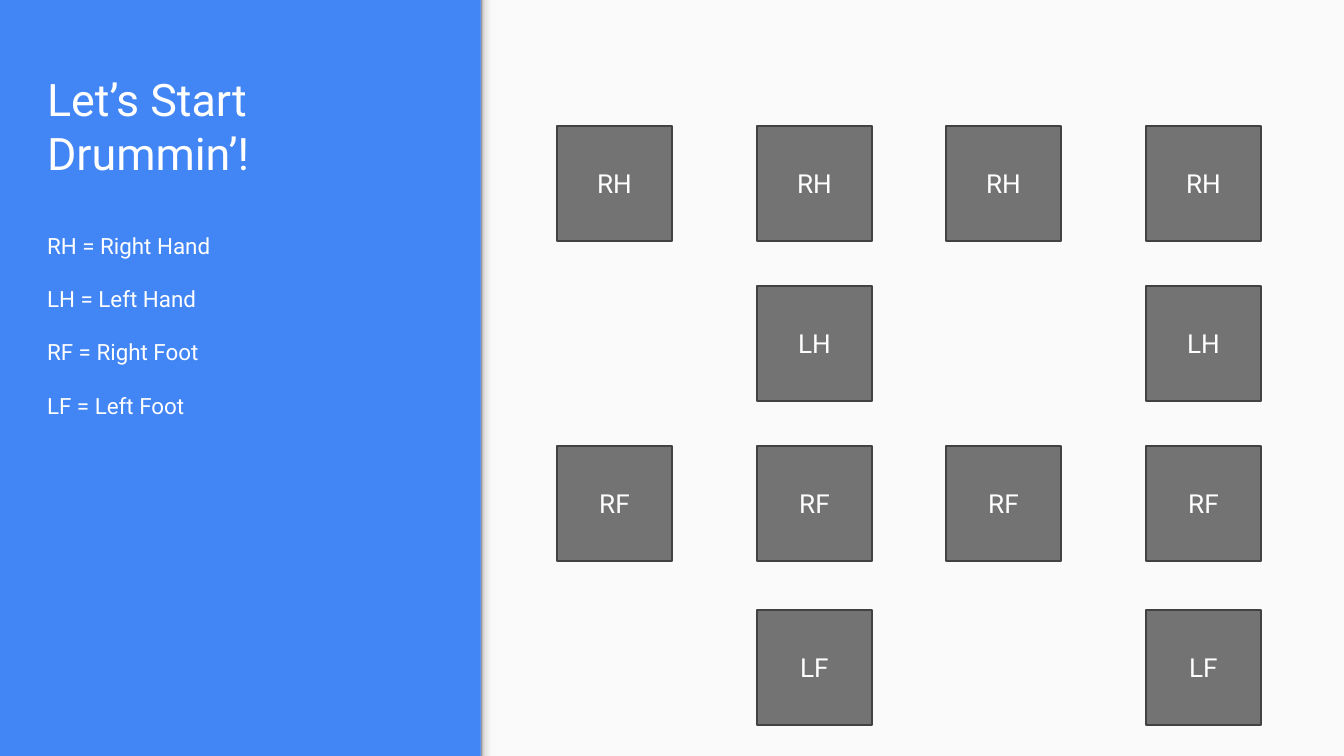
from copy import deepcopy

from lxml.etree import SubElement
from pptx import Presentation
from pptx.dml.color import RGBColor
from pptx.enum.shapes import MSO_SHAPE as Shape
from pptx.enum.text import MSO_ANCHOR as Anchor, MSO_AUTO_SIZE as AutoSize, PP_ALIGN as Align
from pptx.oxml.ns import qn
from pptx.util import Pt

EMU_PER_PX = 914400 / 134.4
PAGE_WIDTH, PAGE_HEIGHT = 1344, 756
PANEL_LEFT = 481
EDGE_WIDTH = 16
INSET = 13
FONT = "Roboto"
COLORS = {
    "blue": "4285F4",
    "panel": "FAFAFA",
    "pad": "737373",
    "outline": "424242",
    "white": "FFFFFF",
}
EDGE_STOPS = [(0, "F9F9F9"), (0.36, "F9F9F9"), (0.8, "DEDEDE"), (1, "999999")]

TITLE = "Let’s Start Drummin’!"
LEGEND = ["RH = Right Hand", "LH = Left Hand", "RF = Right Foot", "LF = Left Foot"]

PAD_SIZE = 115
BEAT_LEFTS = [557, 757, 946, 1146]
# Limb, top of its row, and the beats on which it plays
LIMB_ROWS = [
    ("RH", 126, (0, 1, 2, 3)),
    ("LH", 286, (1, 3)),
    ("RF", 446, (0, 1, 2, 3)),
    ("LF", 610, (1, 3)),
]


def px(length):
    return round(length * EMU_PER_PX)


def color(name):
    return RGBColor.from_string(COLORS[name])


def place(shape, left, top, width, height):
    shape.left, shape.top = px(left), px(top)
    shape.width, shape.height = px(width), px(height)


def add_rectangle(page, left, top, width, height, fill=None):
    box = page.shapes.add_shape(Shape.RECTANGLE, px(left), px(top), px(width), px(height))
    box.shadow.inherit = False
    box.line.fill.background()
    if fill:
        box.fill.solid()
        box.fill.fore_color.rgb = color(fill)
    return box


def format_frame(shape, anchor):
    frame = shape.text_frame
    frame.word_wrap = True
    frame.auto_size = AutoSize.NONE
    frame.vertical_anchor = anchor
    frame.margin_left = frame.margin_right = px(INSET)
    frame.margin_top = frame.margin_bottom = px(INSET)
    return frame


def write(para, text, size, align=Align.LEFT):
    para.alignment = align
    span = para.add_run()
    span.text = text
    span.font.name = FONT
    span.font.size = Pt(size)
    span.font.color.rgb = color("white")


def remove_bullet(para):
    properties = para._p.get_or_add_pPr()
    properties.set("marL", "0")
    properties.set("indent", "0")
    SubElement(properties, qn("a:buNone"))


def add_panel(page):
    """Add the light right-hand panel and the shaded strip along its edge."""
    add_rectangle(page, PANEL_LEFT, 0, PAGE_WIDTH - PANEL_LEFT, PAGE_HEIGHT, "panel")
    center = PANEL_LEFT + EDGE_WIDTH / 2
    edge = add_rectangle(page, center - PAGE_HEIGHT / 2, (PAGE_HEIGHT - EDGE_WIDTH) / 2,
                         PAGE_HEIGHT, EDGE_WIDTH)
    edge.rotation = 270
    edge.fill.gradient()
    edge.fill.gradient_angle = 90
    stop_list = edge._element.spPr.find(".//" + qn("a:gsLst"))
    while len(stop_list) < len(EDGE_STOPS):
        stop_list.append(deepcopy(stop_list[0]))
    for stop, (position, shade) in zip(edge.fill.gradient_stops, EDGE_STOPS):
        stop.position = position
        stop.color.rgb = RGBColor.from_string(shade)


def fill_title(page):
    title = page.shapes.title
    place(title, 34, 52, 413, 140)
    write(format_frame(title, Anchor.BOTTOM).paragraphs[0], TITLE, 24)


def fill_legend(page):
    body = page.placeholders[1]
    place(body, 34, 215, 413, 465)
    frame = format_frame(body, Anchor.TOP)
    for index, text in enumerate(LEGEND):
        para = frame.add_paragraph() if index else frame.paragraphs[0]
        para.line_spacing = 1.15
        para.space_before = Pt(12 if index else 0)
        remove_bullet(para)
        write(para, text, 12)
    para.space_after = Pt(12)


def add_pad(page, limb, left, top):
    pad = add_rectangle(page, left, top, PAD_SIZE, PAD_SIZE, "pad")
    pad.line.color.rgb = color("outline")
    pad.line.width = Pt(0.75)
    write(format_frame(pad, Anchor.MIDDLE).paragraphs[0], limb, 14, Align.CENTER)


def main():
    deck = Presentation()
    deck.slide_width, deck.slide_height = px(PAGE_WIDTH), px(PAGE_HEIGHT)
    page = deck.slides.add_slide(deck.slide_layouts[1])
    page.background.fill.solid()
    page.background.fill.fore_color.rgb = color("blue")
    add_panel(page)
    fill_title(page)
    fill_legend(page)
    for limb, top, beats in LIMB_ROWS:
        for beat in beats:
            add_pad(page, limb, BEAT_LEFTS[beat], top)
    deck.save("out.pptx")


if __name__ == "__main__":
    main()
